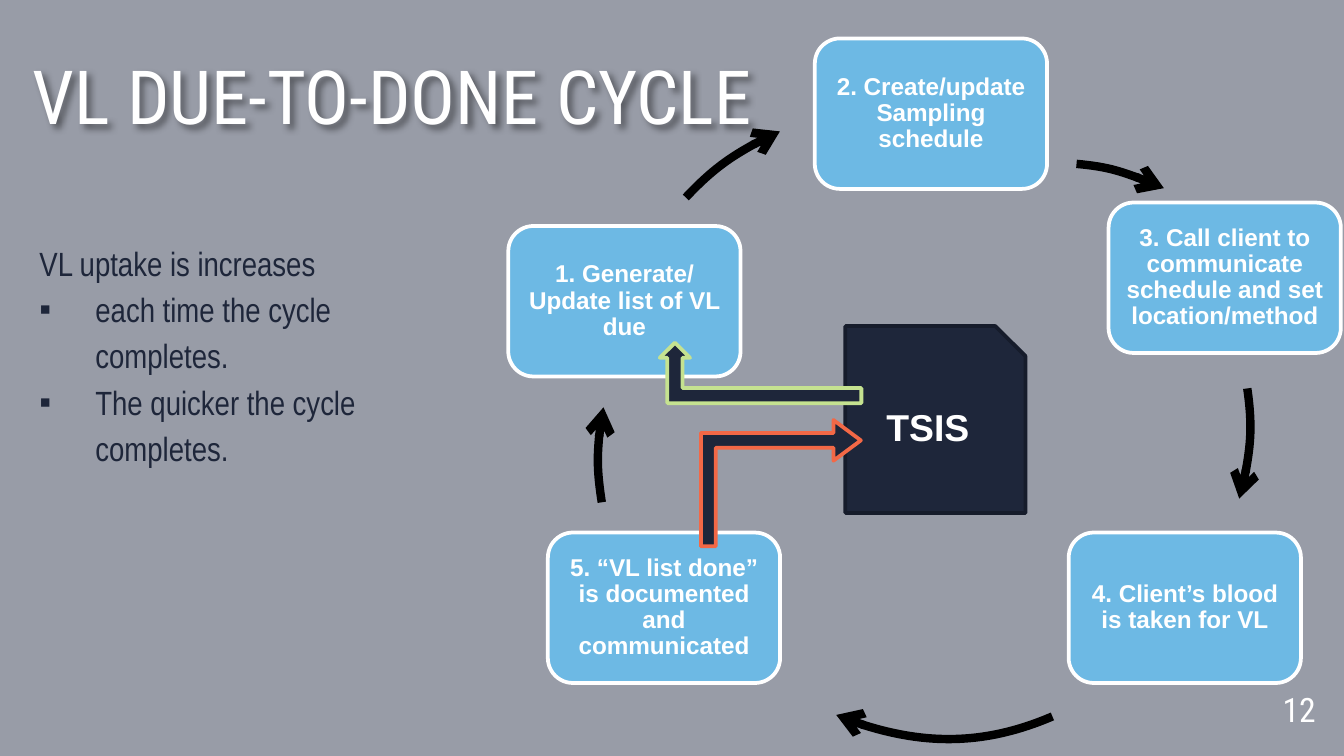
import pptx
import pptx.util
import pptx.dml.color
import pptx.enum.shapes
import pptx.enum.text
import pptx.oxml
import pptx.oxml.ns
from lxml import etree

Pt = pptx.util.Pt
RGBColor = pptx.dml.color.RGBColor
MSO_SHAPE = pptx.enum.shapes.MSO_SHAPE
PP_ALIGN = pptx.enum.text.PP_ALIGN
MSO_ANCHOR = pptx.enum.text.MSO_ANCHOR
qn = pptx.oxml.ns.qn

GREY = RGBColor(0x98, 0x9C, 0xA7)
WHITE = RGBColor(0xFF, 0xFF, 0xFF)
BLACK = RGBColor(0x00, 0x00, 0x00)
NAVY = RGBColor(0x1E, 0x26, 0x3A)
DARK_NAVY = RGBColor(0x16, 0x1C, 0x2B)
BLUE = RGBColor(0x6D, 0xB9, 0xE4)
ORANGE = RGBColor(0xF3, 0x68, 0x46)
GREEN = RGBColor(0xC5, 0xE2, 0x90)

TITLE = "VL DUE-TO-DONE CYCLE"
INTRO = "VL uptake is increases"
BULLETS = ["each time the cycle completes.", "The quicker the cycle completes."]
PAGE_NUMBER = "12"
HUB = "TSIS"

STEP_SIZE = (124.4, 80.6)
STEPS = [
    ("2. Create/update Sampling schedule", 436.5, 20.6),
    ("3. Call client to communicate schedule and set location/method", 593.9, 108.5),
    ("4. Client’s blood is taken for VL", 572.5, 285.3),
    ("5. “VL list done” is documented and communicated", 293.5, 285.3),
    ("1. Generate/ Update list of VL due", 272.3, 121.1),
]

CIRCLE_SIZE = 293.8
CYCLE_ARROWS = [
    ((414.7, 87.1), [(576.7, 87.8), (593.3, 89.3), (609.1, 94.3), (623.5, 100.8)]),
    ((375.8, 81.4), [(668.2, 208.1), (671, 227.5), (669.6, 247.7), (663.9, 267.1)]),
    ((360, 101.5), [(563.8, 383.8), (527, 399.6), (485.3, 398.9), (448, 383)]),
    ((320.4, 99.4), [(322.4, 269.1), (319.7, 252), (319.7, 234.7), (323.3, 218.2)]),
    ((328.3, 58.3), [(367.4, 105.8), (381.6, 90.7), (398.9, 78.5), (417.8, 70.4)]),
]

HUB_ARROWS = [
    ((384.5, 216, 67.7, 85.7), 90, (0.117, 0.161, 0.217), ORANGE),
    ((353.5, 183.6, 108, 32.4), 0, (0.25, 0.25, 0.25), GREEN),
]


def place(shape, left, top, width, height):
    shape.left, shape.top = Pt(left), Pt(top)
    shape.width, shape.height = Pt(width), Pt(height)


def format_frame(frame, anchor, inset=0):
    frame.word_wrap = True
    frame.auto_size = pptx.enum.text.MSO_AUTO_SIZE.NONE
    frame.vertical_anchor = anchor
    frame.margin_left = frame.margin_right = Pt(inset)
    frame.margin_top = frame.margin_bottom = Pt(inset)


def write(paragraph, text, font_name, size, color, align, spacing, bold=False):
    paragraph.alignment = align
    paragraph.line_spacing = spacing
    paragraph.space_before = paragraph.space_after = Pt(0)
    run = paragraph.add_run()
    run.text = text
    run.font.name = font_name
    run.font.size = Pt(size)
    run.font.bold = bold
    run.font.color.rgb = color


def add_box(slide, kind, box, fill, line):
    shape = slide.shapes.add_shape(kind, *map(Pt, box))
    shape.shadow.inherit = False
    shape.fill.solid()
    shape.fill.fore_color.rgb = fill
    shape.line.color.rgb = line
    shape.line.width = Pt(2)
    return shape


def set_indent(paragraph, left, hanging, bullet=None):
    properties = paragraph._p.get_or_add_pPr()
    properties.set("marL", str(Pt(left)))
    properties.set("indent", str(Pt(-hanging)))
    if bullet is None:
        etree.SubElement(properties, qn("a:buNone"))
        return
    color = etree.SubElement(properties, qn("a:buClr"))
    etree.SubElement(color, qn("a:srgbClr"), val=str(NAVY))
    etree.SubElement(properties, qn("a:buFont"), typeface="Arial")
    etree.SubElement(properties, qn("a:buChar"), char=bullet)


def add_title_shadow(title):
    title.fill.background()
    effects = etree.SubElement(title._element.spPr, qn("a:effectLst"))
    shadow = etree.SubElement(effects, qn("a:outerShdw"), blurRad=str(Pt(4)),
                              dist=str(Pt(3)), dir="2700000", algn="tl")
    color = etree.SubElement(shadow, qn("a:srgbClr"), val=str(BLACK))
    etree.SubElement(color, qn("a:alpha"), val="43000")


def add_curve_point(parent, point):
    etree.SubElement(parent, qn("a:pt"), x=str(Pt(point[0])), y=str(Pt(point[1])))


def add_cycle_arrow(slide, corner, controls):
    start, *rest = [(x - corner[0], y - corner[1]) for x, y in controls]
    builder = slide.shapes.build_freeform(0, 0)
    builder.add_line_segments([(Pt(CIRCLE_SIZE), Pt(CIRCLE_SIZE))], close=False)
    shape = builder.convert_to_shape()
    place(shape, *corner, CIRCLE_SIZE, CIRCLE_SIZE)
    outline = next(shape._element.iter(qn("a:path")))
    for segment in list(outline):
        outline.remove(segment)
    add_curve_point(etree.SubElement(outline, qn("a:moveTo")), start)
    curve = etree.SubElement(outline, qn("a:cubicBezTo"))
    for point in rest:
        add_curve_point(curve, point)
    shape.shadow.inherit = False
    shape.fill.background()
    shape.line.color.rgb = BLACK
    shape.line.width = Pt(4.5)
    etree.SubElement(shape.line._get_or_add_ln(), qn("a:tailEnd"), type="arrow")


def add_text(slide):
    title = slide.shapes.title
    place(title, 17.5, 44.3, 614.9, 31)
    format_frame(title.text_frame, MSO_ANCHOR.BOTTOM)
    write(title.text_frame.paragraphs[0], TITLE, "Roboto Condensed", 40,
          WHITE, PP_ALIGN.LEFT, 0.9)
    add_title_shadow(title)

    body = slide.placeholders[1]
    place(body, 15.1, 126.7, 233.3, 239)
    frame = body.text_frame
    format_frame(frame, MSO_ANCHOR.TOP)
    style = ("Arial Narrow", 18, NAVY, PP_ALIGN.LEFT, 1.15)
    write(frame.paragraphs[0], INTRO, *style)
    set_indent(frame.paragraphs[0], 6, 0)
    for bullet in BULLETS:
        paragraph = frame.add_paragraph()
        write(paragraph, bullet, *style)
        set_indent(paragraph, 36, 30, "▪")

    number = slide.shapes.add_textbox(Pt(661.7), Pt(365.8), Pt(43.2), Pt(25.2))
    format_frame(number.text_frame, MSO_ANCHOR.BOTTOM)
    write(number.text_frame.paragraphs[0], PAGE_NUMBER, "Roboto Condensed", 18,
          WHITE, PP_ALIGN.RIGHT, 0.9)


def add_cycle(slide):
    for (text, left, top), (corner, controls) in zip(STEPS, CYCLE_ARROWS):
        step = add_box(slide, MSO_SHAPE.ROUNDED_RECTANGLE, (left, top, *STEP_SIZE), BLUE, WHITE)
        format_frame(step.text_frame, MSO_ANCHOR.MIDDLE, 3.6)
        write(step.text_frame.paragraphs[0], text, "Arial", 13, WHITE,
              PP_ALIGN.CENTER, 0.9, True)
        add_cycle_arrow(slide, corner, controls)


def add_hub(slide):
    hub = add_box(slide, MSO_SHAPE.SNIP_1_RECTANGLE, (452.9, 174.7, 96.5, 100.1), NAVY, DARK_NAVY)
    format_frame(hub.text_frame, MSO_ANCHOR.MIDDLE, 3.6)
    write(hub.text_frame.paragraphs[0], HUB, "Arial", 20, WHITE, PP_ALIGN.CENTER, 1.0, True)
    for box, rotation, adjustments, line in HUB_ARROWS:
        arrow = add_box(slide, MSO_SHAPE.BENT_UP_ARROW, box, NAVY, line)
        arrow.rotation = rotation
        arrow._element.spPr.find(qn("a:xfrm")).set("flipH", "1")
        for index, value in enumerate(adjustments):
            arrow.adjustments[index] = value


def main():
    presentation = pptx.Presentation()
    presentation.slide_width, presentation.slide_height = Pt(720), Pt(405)
    slide = presentation.slides.add_slide(presentation.slide_layouts[1])
    slide.background.fill.solid()
    slide.background.fill.fore_color.rgb = GREY
    add_text(slide)
    add_cycle(slide)
    add_hub(slide)
    presentation.save("out.pptx")


if __name__ == "__main__":
    main()
